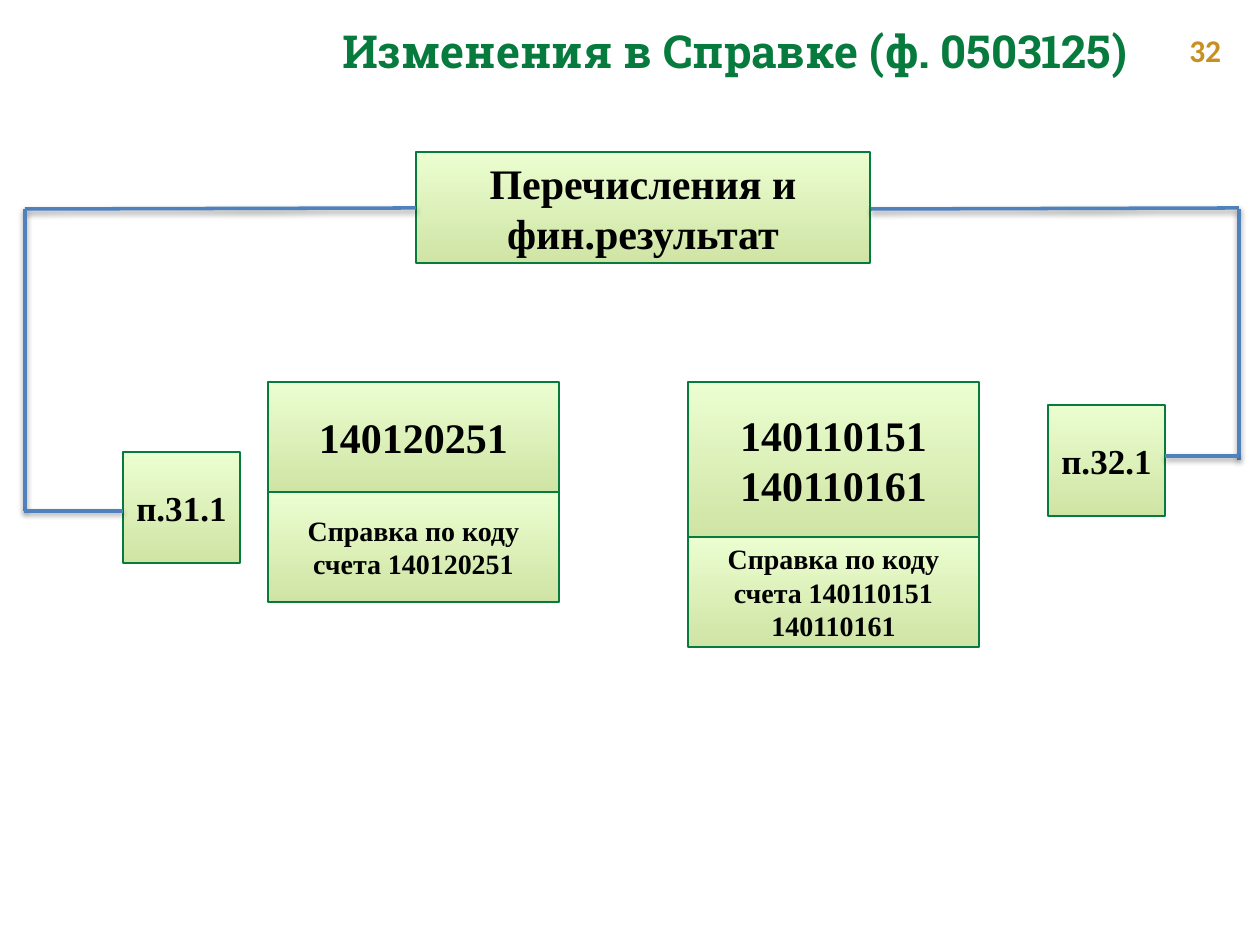
"""Build the slide on changes in form 0503125."""
import pptx
import pptx.util
import pptx.dml.color
import pptx.enum.shapes
import pptx.enum.text
import pptx.oxml
import pptx.oxml.ns

PX = 914400 // 126
NS = pptx.oxml.ns.nsdecls("a")
SHADE = f"""<a:effectLst {NS}><a:outerShdw blurRad="40000" dist="20000" dir="5400000"
rotWithShape="0"><a:srgbClr val="000000"><a:alpha val="38000"/></a:srgbClr>
</a:outerShdw></a:effectLst>"""
ALPHA = f'<a:alpha {NS} val="50000"/>'
CENTER = pptx.enum.text.PP_ALIGN.CENTER


def color(code):
    return pptx.dml.color.RGBColor.from_string(code)


def write(frame, text, size, face, code, align):
    frame.text = text
    frame.word_wrap = True
    for para in frame.paragraphs:
        para.alignment = align
        para.font.size = pptx.util.Pt(size)
        para.font.name = face
        para.font.bold = True
        para.font.color.rgb = color(code)


deck = pptx.Presentation()
deck.slide_width, deck.slide_height = 1260 * PX, 945 * PX
slide = deck.slides.add_slide(deck.slide_layouts[5])
shapes = slide.shapes

title = shapes.title
title.left, title.top, title.width, title.height = [n * PX for n in (220, 16, 968, 68)]
write(title.text_frame, "Изменения в Справке (ф. 0503125)", 26, "Roboto Slab", "077A3E", CENTER)
title.text_frame.auto_size = pptx.enum.text.MSO_AUTO_SIZE.NONE
title.text_frame.paragraphs[0]._p.get_or_add_pPr().set("marL", str(63 * PX))

number = shapes.add_textbox(*[n * PX for n in (1177, 25, 62, 50)])
write(number.text_frame, "32", 18, "Calibri", "C79023", pptx.enum.text.PP_ALIGN.LEFT)

boxes = [
    (416, 152, 454, 111, 24, "Перечисления и фин.результат"),
    (268, 382, 291, 110, 24, "140120251"),
    (123, 452, 117, 111, 20, "п.31.1"),
    (268, 492, 291, 110, 16, "Справка по коду счета 140120251"),
    (688, 382, 291, 155, 24, "140110151\n140110161"),
    (688, 537, 291, 110, 16, "Справка по коду\nсчета 140110151\n140110161"),
    (1048, 405, 117, 111, 20, "п.32.1"),
]
for *place, size, text in boxes:
    box = shapes.add_shape(
        pptx.enum.shapes.MSO_SHAPE.RECTANGLE, *[n * PX for n in place])
    box.shadow.inherit = False
    box.fill.gradient()
    box.fill.gradient_angle = 90
    for stop, code, pos in zip(box.fill.gradient_stops, ("A0CA4A", "DAFFA5"), (0, 1)):
        stop.color.rgb = color(code)
        stop.position = pos
    for tint in box._element.spPr.iter(pptx.oxml.ns.qn("a:srgbClr")):
        tint.append(pptx.oxml.parse_xml(ALPHA))
    box.line.color.rgb = color("077A3E")
    box.line.width = pptx.util.Pt(0.75)
    box.text_frame.vertical_anchor = pptx.enum.text.MSO_ANCHOR.MIDDLE
    write(box.text_frame, text, size, "Times New Roman", "000000", CENTER)

lines = [
    (416, 208, 25, 209),
    (25, 209, 25, 511),
    (24, 511, 123, 511),
    (1239, 208, 871, 209),
    (1239, 209, 1239, 460),
    (1165, 456, 1239, 456),
]
for ends in lines:
    line = shapes.add_connector(
        pptx.enum.shapes.MSO_CONNECTOR.STRAIGHT, *[n * PX for n in ends])
    line.line.color.rgb = color("4F81BD")
    line.line.width = pptx.util.Pt(2)
    line._element.spPr.append(pptx.oxml.parse_xml(SHADE))

deck.save("out.pptx")
